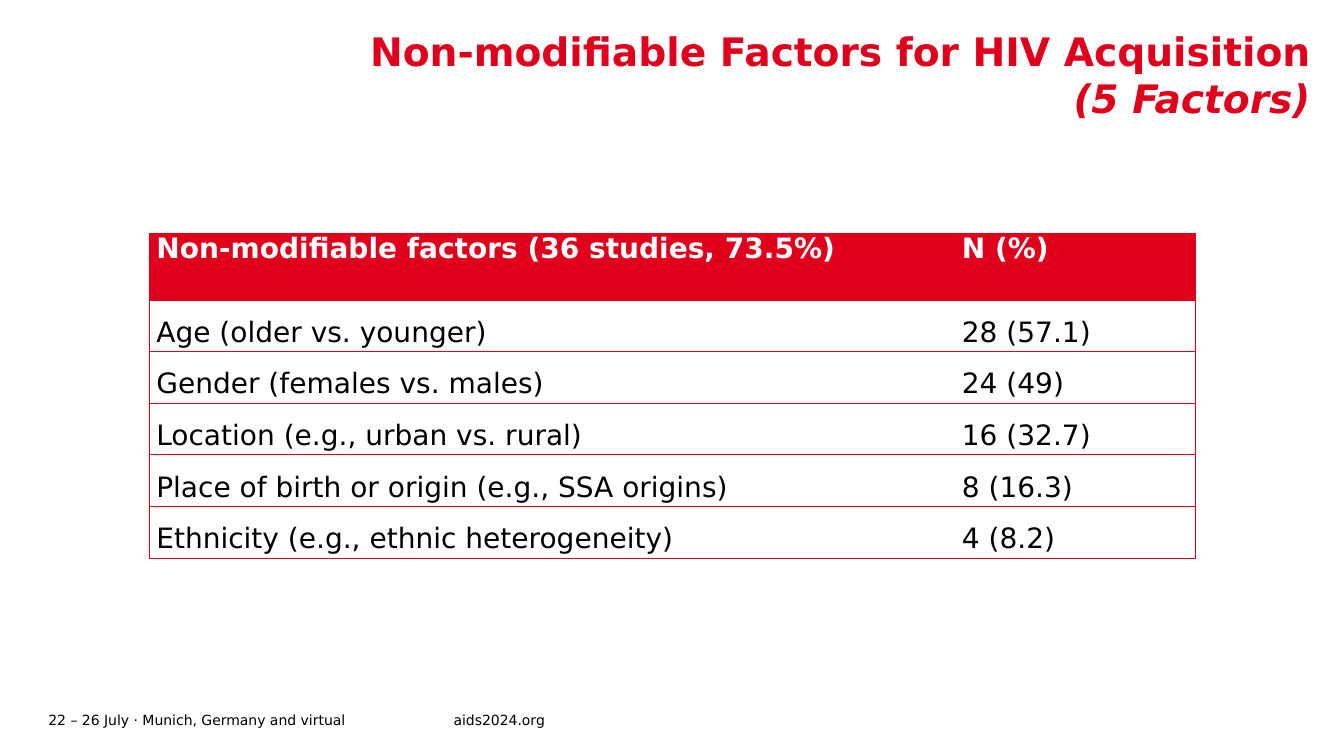
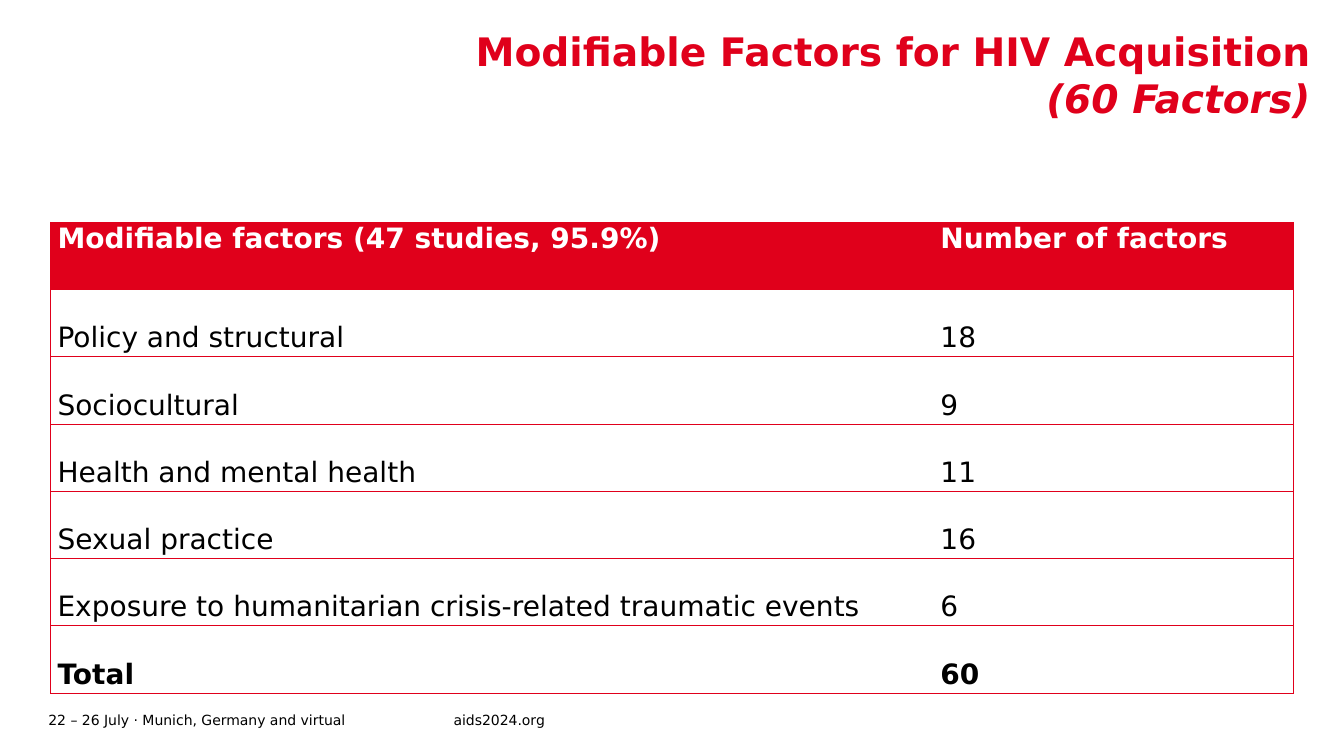
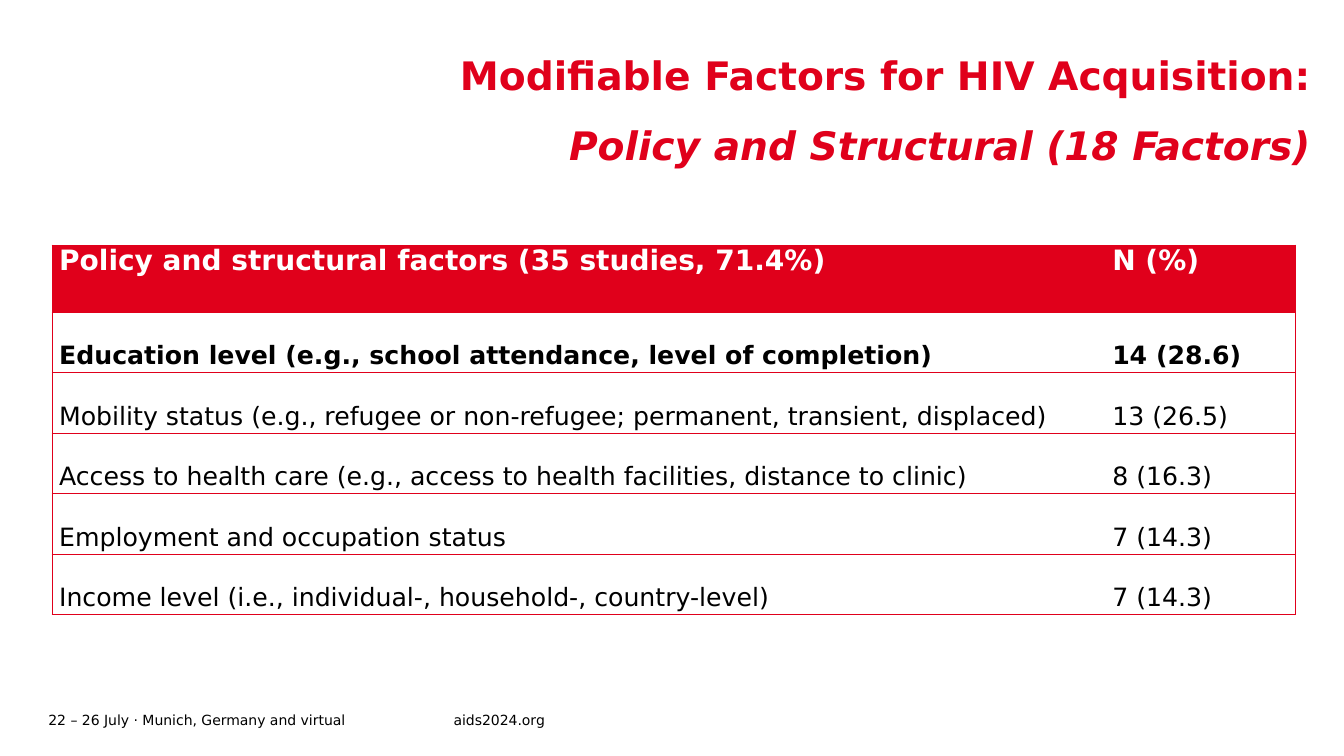
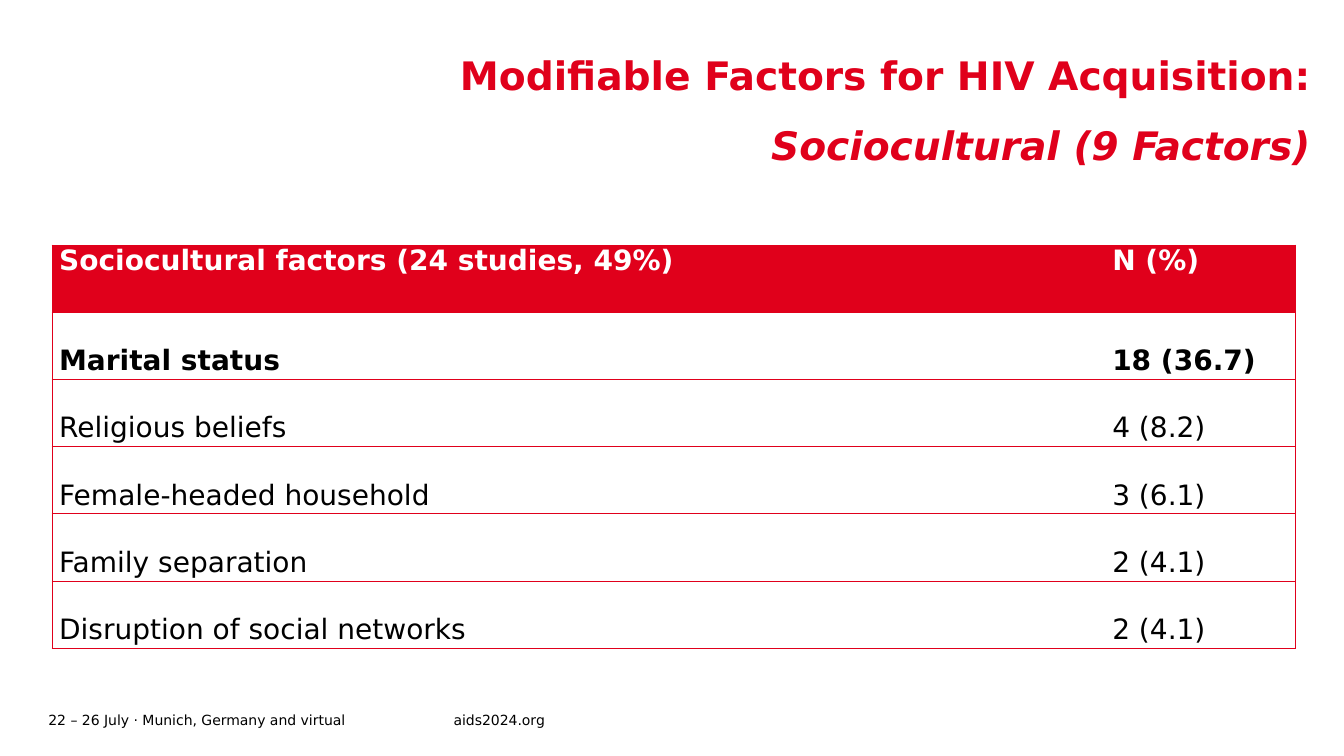
from dataclasses import dataclass

from lxml.etree import SubElement
from pptx import Presentation
from pptx.dml.color import RGBColor
from pptx.enum.text import MSO_ANCHOR, PP_ALIGN
from pptx.oxml.ns import qn
from pptx.util import Cm, Pt


@dataclass(frozen=True)
class Theme:
    font: str = "DejaVu Sans"
    accent: str = "E0001B"
    text: str = "000000"
    inverse: str = "FFFFFF"
    title_size: float = 28
    table_size: float = 20
    dense_size: float = 18
    footer_size: float = 10
    rule_width: float = 0.5


@dataclass(frozen=True)
class Box:
    left: float
    top: float
    width: float
    height: float

    def lengths(self):
        return Cm(self.left), Cm(self.top), Cm(self.width), Cm(self.height)


THEME = Theme()
TITLE_BOX = Box(5.82, 0.69, 27.2, 3.2)
FOOTER_BOX = Box(1.22, 17.83, 15.1, 0.61)
FOOTER_SPLIT = 10.21
HEADER_HEIGHT = 1.69
CELL_INSET = 0.18
FOOTERS = ("22 – 26 July · Munich, Germany and virtual", "aids2024.org")

PAGES = [
    dict(
        title=("Non-modifiable Factors for HIV Acquisition", "(5 Factors)"),
        title_spacing=1,
        left=3.76, top=5.87, widths=(20.3, 6.06),
        row_height=1.3, row_spacing=1.5,
        rows=[
            ("Non-modifiable factors (36 studies, 73.5%)", "N (%)"),
            ("Age (older vs. younger)", "28 (57.1)"),
            ("Gender (females vs. males)", "24 (49)"),
            ("Location (e.g., urban vs. rural)", "16 (32.7)"),
            ("Place of birth or origin (e.g., SSA origins)", "8 (16.3)"),
            ("Ethnicity (e.g., ethnic heterogeneity)", "4 (8.2)"),
        ],
    ),
    dict(
        title=("Modifiable Factors for HIV Acquisition", "(60 Factors)"),
        title_spacing=1,
        left=1.27, top=5.6, widths=(22.25, 9.07),
        row_height=1.69, row_spacing=2, bold_row=6,
        rows=[
            ("Modifiable factors (47 studies, 95.9%)", "Number of factors"),
            ("Policy and structural", "18"),
            ("Sociocultural", "9"),
            ("Health and mental health", "11"),
            ("Sexual practice", "16"),
            ("Exposure to humanitarian crisis-related traumatic events", "6"),
            ("Total", "60"),
        ],
    ),
    dict(
        title=("Modifiable Factors for HIV Acquisition:",
               "Policy and Structural (18 Factors)"),
        title_spacing=1.5,
        left=1.31, top=6.17, widths=(26.54, 4.79),
        row_height=1.52, row_spacing=2, bold_row=1, size=THEME.dense_size,
        rows=[
            ("Policy and structural factors (35 studies, 71.4%)", "N (%)"),
            ("Education level (e.g., school attendance, level of completion)", "14 (28.6)"),
            ("Mobility status (e.g., refugee or non-refugee; permanent, transient, displaced)",
             "13 (26.5)"),
            ("Access to health care (e.g., access to health facilities, distance to clinic)",
             "8 (16.3)"),
            ("Employment and occupation status", "7 (14.3)"),
            ("Income level (i.e., individual-, household-, country-level)", "7 (14.3)"),
        ],
    ),
    dict(
        title=("Modifiable Factors for HIV Acquisition:", "Sociocultural (9 Factors)"),
        title_spacing=1.5,
        left=1.31, top=6.17, widths=(26.54, 4.79),
        row_height=1.69, row_spacing=2, bold_row=1,
        rows=[
            ("Sociocultural factors (24 studies, 49%)", "N (%)"),
            ("Marital status", "18 (36.7)"),
            ("Religious beliefs", "4 (8.2)"),
            ("Female-headed household", "3 (6.1)"),
            ("Family separation", "2 (4.1)"),
            ("Disruption of social networks", "2 (4.1)"),
        ],
    ),
]


def style_paragraph(para, size, color, bold=False, italic=False):
    for span in para.runs:
        span.font.name = THEME.font
        span.font.size = Pt(size)
        span.font.color.rgb = RGBColor.from_string(color)
        span.font.bold = bold
        span.font.italic = italic


def add_text(page, box, text, anchor=MSO_ANCHOR.TOP):
    frame = page.shapes.add_textbox(*box.lengths()).text_frame
    frame.word_wrap = True
    frame.vertical_anchor = anchor
    frame.margin_left = frame.margin_right = frame.margin_top = frame.margin_bottom = 0
    frame.text = text
    return frame


def add_title(page, box, lines, spacing):
    frame = add_text(page, box, "\n".join(lines))
    for index, para in enumerate(frame.paragraphs):
        para.alignment = PP_ALIGN.RIGHT
        para.line_spacing = spacing
        style_paragraph(para, THEME.title_size, THEME.accent, bold=True, italic=index == 1)


def add_footer(page, box):
    date_box = Box(box.left, box.top, FOOTER_SPLIT, box.height)
    site_box = Box(box.left + FOOTER_SPLIT, box.top, box.width - FOOTER_SPLIT, box.height)
    for part, text in zip((date_box, site_box), FOOTERS):
        frame = add_text(page, part, text, MSO_ANCHOR.MIDDLE)
        style_paragraph(frame.paragraphs[0], THEME.footer_size, THEME.text)


def set_borders(cell, is_first, is_last):
    properties = cell._tc.get_or_add_tcPr()
    sides = {"lnL": is_first, "lnR": is_last, "lnT": True, "lnB": True}
    for side, visible in sides.items():
        line = SubElement(properties, qn(f"a:{side}"), w=str(Pt(THEME.rule_width)))
        if visible:
            fill = SubElement(line, qn("a:solidFill"))
            SubElement(fill, qn("a:srgbClr"), val=THEME.accent)
        else:
            SubElement(line, qn("a:noFill"))


def add_factor_table(page, box, rows, widths, row_height, row_spacing, bold_row, size):
    table = page.shapes.add_table(len(rows), len(widths), *box.lengths()).table
    table.horz_banding = False
    for column, width in zip(table.columns, widths):
        column.width = Cm(width)
    for row_index, values in enumerate(rows):
        is_header = row_index == 0
        table.rows[row_index].height = Cm(HEADER_HEIGHT if is_header else row_height)
        for column_index, value in enumerate(values):
            cell = table.cell(row_index, column_index)
            cell.text = value
            cell.margin_left = cell.margin_right = Cm(CELL_INSET)
            cell.margin_top = cell.margin_bottom = 0
            set_borders(cell, column_index == 0, column_index == len(values) - 1)
            para = cell.text_frame.paragraphs[0]
            if is_header:
                cell.fill.solid()
                cell.fill.fore_color.rgb = RGBColor.from_string(THEME.accent)
                style_paragraph(para, THEME.table_size, THEME.inverse, bold=True)
            else:
                cell.fill.background()
                para.line_spacing = row_spacing
                style_paragraph(para, size, THEME.text, bold=row_index == bold_row)


def add_factor_page(deck, content):
    page = deck.slides.add_slide(deck.slide_layouts[6])
    add_footer(page, FOOTER_BOX)
    add_title(page, TITLE_BOX, content["title"], content["title_spacing"])
    rows, widths, row_height = content["rows"], content["widths"], content["row_height"]
    height = HEADER_HEIGHT + row_height * (len(rows) - 1)
    add_factor_table(
        page,
        Box(content["left"], content["top"], sum(widths), height),
        rows, widths, row_height, content["row_spacing"],
        content.get("bold_row"), content.get("size", THEME.table_size),
    )


def main():
    deck = Presentation()
    deck.slide_width, deck.slide_height = Cm(33.87), Cm(19.05)
    for content in PAGES:
        add_factor_page(deck, content)
    deck.save("out.pptx")


if __name__ == "__main__":
    main()
